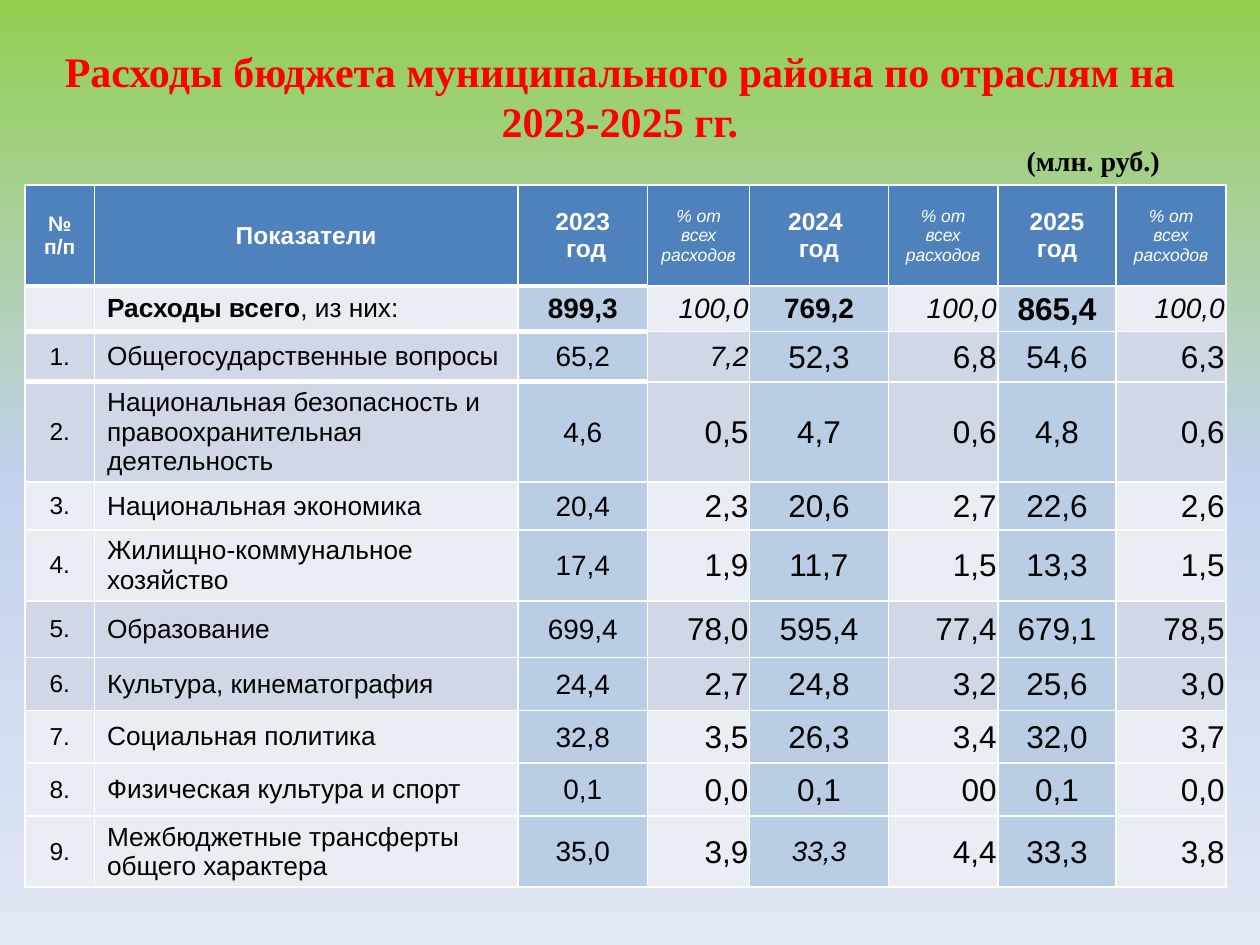
"""Builds a slide with a municipal district's budget expenditure by sector, 2023-2025."""
from copy import deepcopy

from pptx import Presentation
from pptx.dml.color import RGBColor
from pptx.enum.text import MSO_ANCHOR as ANCHOR, MSO_AUTO_SIZE as AUTO, PP_ALIGN as ALIGN
from pptx.oxml import parse_xml
from pptx.oxml.ns import nsdecls, qn
from pptx.util import Inches, Pt

TITLE = "Расходы бюджета муниципального района по отраслям на 2023-2025 гг."
UNIT = "(млн. руб.)"
SHARE = "% от всех расходов"
HEADER = ["№ п/п", "Показатели", "2023\n год", SHARE, "2024 \nгод", SHARE, "2025 год", SHARE]
TOTAL = ["", ("Расходы всего", ", из них:"), "899,3", "100,0", "769,2", "100,0", "865,4", "100,0"]
SECTORS = [
    ("Общегосударственные вопросы", "65,2 7,2 52,3 6,8 54,6 6,3"),
    ("Национальная безопасность и правоохранительная деятельность", "4,6 0,5 4,7 0,6 4,8 0,6"),
    ("Национальная экономика", "20,4 2,3 20,6 2,7 22,6 2,6"),
    ("Жилищно-коммунальное хозяйство", "17,4 1,9 11,7 1,5 13,3 1,5"),
    ("Образование", "699,4 78,0 595,4 77,4 679,1 78,5"),
    ("Культура, кинематография", "24,4 2,7 24,8 3,2 25,6 3,0"),
    ("Социальная политика", "32,8 3,5 26,3 3,4 32,0 3,7"),
    ("Физическая культура и спорт", "0,1 0,0 0,1 00 0,1 0,0"),
    ("Межбюджетные трансферты общего характера", "35,0 3,9 33,3 4,4 33,3 3,8"),
]
ROWS = [HEADER, TOTAL] + [
    [f"{n}.", name, *values.split()] for n, (name, values) in enumerate(SECTORS, 1)
]
COL_WIDTHS = [0.55, 3.36, 1.03, 0.81, 1.1, 0.87, 0.94, 0.87]
ROW_HEIGHTS = [0.8, 0.36, 0.4, 0.4, 0.38, 0.37, 0.45, 0.42, 0.42, 0.42, 0.42]
HEADER_SIZES = [12, 14, 14, 10, 14, 10, 14, 10]
DARK_ROWS = {2, 3, 6, 7}
SMALL_ITALIC = {(2, 3), (10, 4)}
COLORS = {
    "title": "FF0000", "text": "000000", "white": "FFFFFF",
    "header": "4F81BD", "year": "B9CDE5", "light": "E9EDF4", "dark": "D0D8E8",
}
BACKGROUND = [(0, "92D050"), (0.5, "C2D1ED"), (1, "E1E8F5")]


def rgb(name):
    return RGBColor.from_string(COLORS[name])


def set_font(font, face, size, color, bold=False, italic=False):
    font.name, font.size, font.bold, font.italic = face, Pt(size), bold, italic
    font.color.rgb = rgb(color)


def paint_background(s):
    fill = s.background.fill
    fill.gradient()
    fill.gradient_angle = 270
    stops = s._element.find(".//" + qn("a:gsLst"))
    stops.insert(1, deepcopy(stops[0]))
    for stop, (position, color) in zip(fill.gradient_stops, BACKGROUND):
        stop.position = position
        stop.color.rgb = RGBColor.from_string(color)


def cell_style(row, col):
    """Returns fill, text colour, size, bold and italic for a cell."""
    year, share = col in (2, 4, 6), col in (3, 5, 7)
    if row == 0:
        return "header", "white", HEADER_SIZES[col], not share, share
    fill = "year" if year else "dark" if row in DARK_ROWS else "light"
    special = (row, col) in SMALL_ITALIC
    if col < 2:
        size = (14, 15)[col]
    elif row == 1:
        size = 18 if col == 6 else 16
    else:
        size = 16 if col == 2 or special else 18
    return fill, "text", size, row == 1 and year, special or (row == 1 and share)


def set_borders(cell, row, col):
    tc_pr = cell._tc.get_or_add_tcPr()
    thick_top = col < 3 and 1 <= row <= 3
    thick_bottom = col < 3 and row <= 2
    widths = {"L": 1, "R": 1, "T": 3 if thick_top else 1, "B": 3 if thick_bottom else 1}
    for i, (side, width) in enumerate(widths.items()):
        tc_pr.insert(i, parse_xml(
            f'<a:ln{side} {nsdecls("a")} w="{Pt(width)}"><a:solidFill>'
            f'<a:srgbClr val="{COLORS["white"]}"/></a:solidFill></a:ln{side}>'))


def fill_cell(cell, row, col, content):
    fill, color, size, bold, italic = cell_style(row, col)
    cell.fill.solid()
    cell.fill.fore_color.rgb = rgb(fill)
    cell.vertical_anchor = ANCHOR.MIDDLE
    if row and col > 1:
        cell.margin_left = cell.margin_right = cell.margin_top = Inches(0.01)
        cell.margin_bottom = 0
    tf = cell.text_frame
    if isinstance(content, tuple):
        for i, part in enumerate(content):
            r = tf.paragraphs[0].add_run()
            r.text = part
            set_font(r.font, "Arial", size, color, i == 0)
    else:
        tf.text = content
    for p in tf.paragraphs:
        if row and col == 1:
            p.alignment = ALIGN.LEFT
        else:
            p.alignment = ALIGN.RIGHT if row and col in (3, 5, 7) else ALIGN.CENTER
        if not isinstance(content, tuple):
            set_font(p.font, "Arial", size, color, bold, italic)
    set_borders(cell, row, col)


def add_budget_table(s):
    table = s.shapes.add_table(len(ROWS), len(HEADER), Inches(0.2), Inches(1.47),
                               Inches(sum(COL_WIDTHS)), Inches(sum(ROW_HEIGHTS))).table
    table.first_row = table.horz_banding = False
    for column, width in zip(table.columns, COL_WIDTHS):
        column.width = Inches(width)
    for row, height in zip(table.rows, ROW_HEIGHTS):
        row.height = Inches(height)
    for i, contents in enumerate(ROWS):
        for j, content in enumerate(contents):
            fill_cell(table.cell(i, j), i, j, content)


def set_text(sp, box, text, size, color, align):
    sp.left, sp.top, sp.width, sp.height = map(Inches, box)
    tf = sp.text_frame
    tf.word_wrap, tf.auto_size, tf.vertical_anchor = True, AUTO.NONE, ANCHOR.TOP
    tf.text = text
    p = tf.paragraphs[0]
    p.alignment = align
    set_font(p.font, "Times New Roman", size, color, True)


def main():
    prs = Presentation()
    prs.slide_width, prs.slide_height = Inches(10), Inches(7.5)
    s = prs.slides.add_slide(prs.slide_layouts[5])
    paint_background(s)
    set_text(s.shapes.title, (0, 0.31, 9.84, 0.47), TITLE, 24, "title", ALIGN.CENTER)
    add_budget_table(s)
    unit = s.shapes.add_textbox(0, 0, 0, 0)
    set_text(unit, (8.05, 1.09, 1.72, 0.37), UNIT, 16, "text", ALIGN.LEFT)
    prs.save("out.pptx")


if __name__ == "__main__":
    main()
